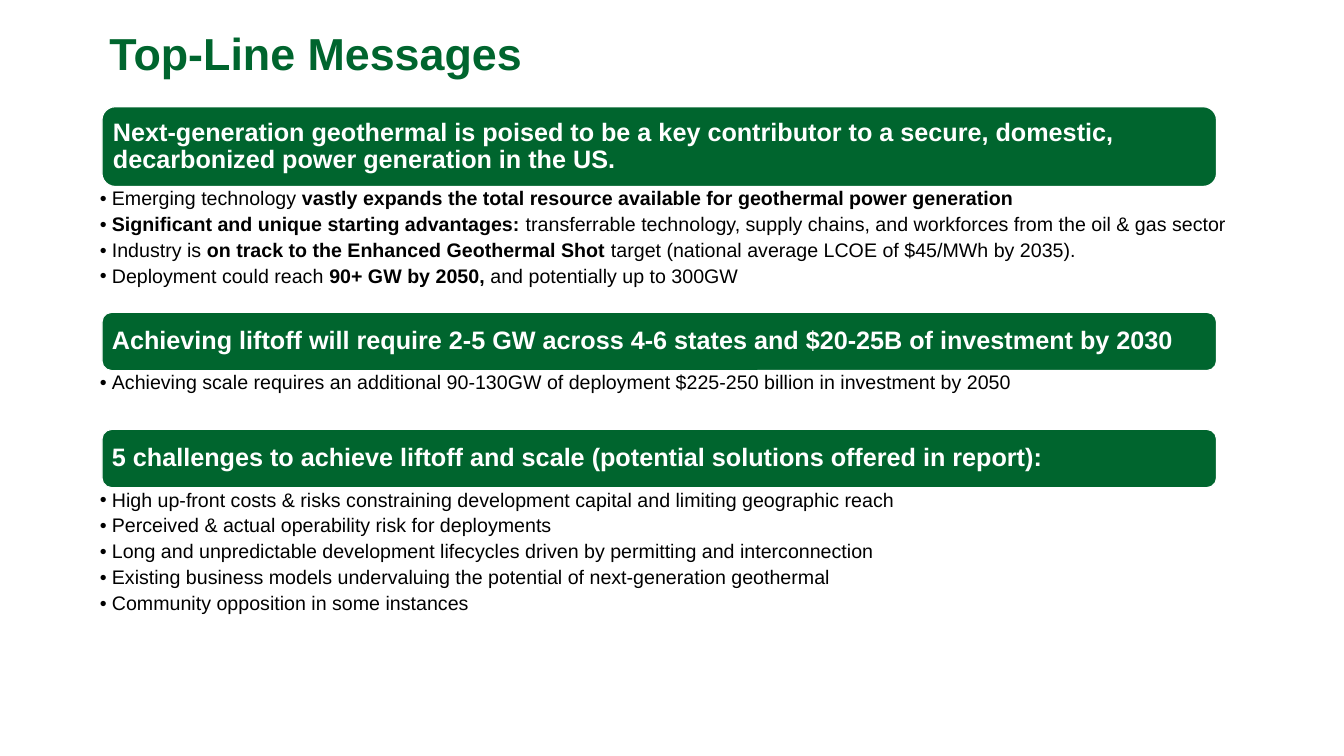
from lxml.etree import SubElement
from pptx import Presentation
from pptx.dml.color import RGBColor
from pptx.enum.shapes import MSO_SHAPE
from pptx.enum.text import MSO_ANCHOR, PP_ALIGN
from pptx.oxml.ns import qn
from pptx.util import Cm, Pt

GREEN = RGBColor(0x00, 0x65, 0x2E)
WHITE = RGBColor(0xFF, 0xFF, 0xFF)
BLACK = RGBColor(0x00, 0x00, 0x00)

# Each section: banner height, list height, heading, bullets (** marks bold)
SECTIONS = [
    (2.01, 3.17,
     "Next-generation geothermal is poised to be a key contributor to a secure, "
     "domestic, decarbonized power generation in the US.",
     ["Emerging technology **vastly expands the total resource available for "
      "geothermal power generation**",
      "**Significant and unique starting advantages: **transferrable technology, "
      "supply chains, and workforces from the oil & gas sector",
      "Industry is **on track to the Enhanced Geothermal Shot **target "
      "(national average LCOE of $45/MWh by 2035).",
      "Deployment could reach **90+ GW by 2050, **and potentially up to 300GW"]),
    (1.47, 1.48,
     "Achieving liftoff will require 2-5 GW across 4-6 states and $20-25B of "
     "investment by 2030",
     ["Achieving scale requires an additional 90-130GW of deployment $225-250 "
      "billion in investment by 2050"]),
    (1.47, 4.04,
     "5 challenges to achieve liftoff and scale (potential solutions offered in report):",
     ["High up-front costs & risks constraining development capital and limiting "
      "geographic reach",
      "Perceived & actual operability risk for deployments",
      "Long and unpredictable development lifecycles driven by permitting and "
      "interconnection",
      "Existing business models undervaluing the potential of next-generation geothermal",
      "Community opposition in some instances"]),
]


def set_frame(frame, anchor, left, top, right, bottom):
    frame.word_wrap = True
    frame.vertical_anchor = anchor
    frame.margin_left, frame.margin_top = Cm(left), Cm(top)
    frame.margin_right, frame.margin_bottom = Cm(right), Cm(bottom)


def write(para, text, *, size, color, bold=False, line_spacing=1.0, after=0):
    """Fill a paragraph; ** switches bold on and off."""
    para.alignment = PP_ALIGN.LEFT
    para.line_spacing = line_spacing
    para.space_after = Pt(after)
    for index, part in enumerate(text.split("**")):
        if not part:
            continue
        span = para.add_run()
        span.text = part
        span.font.name = "Arial"
        span.font.size = Pt(size)
        span.font.bold = bold or index % 2 == 1
        span.font.color.rgb = color


def add_bullet(para):
    props = para._p.get_or_add_pPr()
    props.set("marL", str(Cm(0.3)))
    props.set("indent", str(-Cm(0.3)))
    SubElement(props, qn("a:buFont")).set("typeface", "Arial")
    SubElement(props, qn("a:buChar")).set("char", "•")


def add_title(page, left, top, width, height):
    box = page.shapes.add_textbox(Cm(left), Cm(top), Cm(width), Cm(height))
    set_frame(box.text_frame, MSO_ANCHOR.BOTTOM, 0.25, 0.05, 0.25, 0.05)
    write(box.text_frame.paragraphs[0], "Top-Line Messages",
          size=32, color=GREEN, bold=True)


def add_banner(page, heading, left, top, width, height):
    banner = page.shapes.add_shape(MSO_SHAPE.ROUNDED_RECTANGLE,
                                   Cm(left), Cm(top), Cm(width), Cm(height))
    banner.shadow.inherit = False
    banner.fill.solid()
    banner.fill.fore_color.rgb = GREEN
    banner.line.color.rgb = WHITE
    banner.line.width = Pt(0.85)
    set_frame(banner.text_frame, MSO_ANCHOR.MIDDLE, 0.18, 0.18, 0.18, 0.18)
    write(banner.text_frame.paragraphs[0], heading,
          size=18, color=WHITE, bold=True, line_spacing=0.9)


def add_bullets(page, bullets, left, top, width, height):
    box = page.shapes.add_textbox(Cm(left), Cm(top), Cm(width), Cm(height))
    frame = box.text_frame
    set_frame(frame, MSO_ANCHOR.TOP, 0.97, 0.06, 0.32, 0.06)
    for index, text in enumerate(bullets):
        para = frame.add_paragraph() if index else frame.paragraphs[0]
        add_bullet(para)
        write(para, text, size=14, color=BLACK, line_spacing=0.9, after=3.4)


def add_sections(page, left, top, width):
    """Stack banners and lists; each list is wider than its banner."""
    for banner_height, list_height, heading, bullets in SECTIONS:
        add_banner(page, heading, left + 1.02, top, width - 2.06, banner_height)
        top += banner_height
        add_bullets(page, bullets, left, top, width, list_height)
        top += list_height


def main():
    deck = Presentation()
    deck.slide_width, deck.slide_height = Cm(33.87), Cm(19.05)
    page = deck.slides.add_slide(deck.slide_layouts[6])
    add_title(page, 2.51, 0.99, 29.79, 1.07)
    add_sections(page, 1.55, 2.69, 30.15)
    deck.save("out.pptx")


if __name__ == "__main__":
    main()
